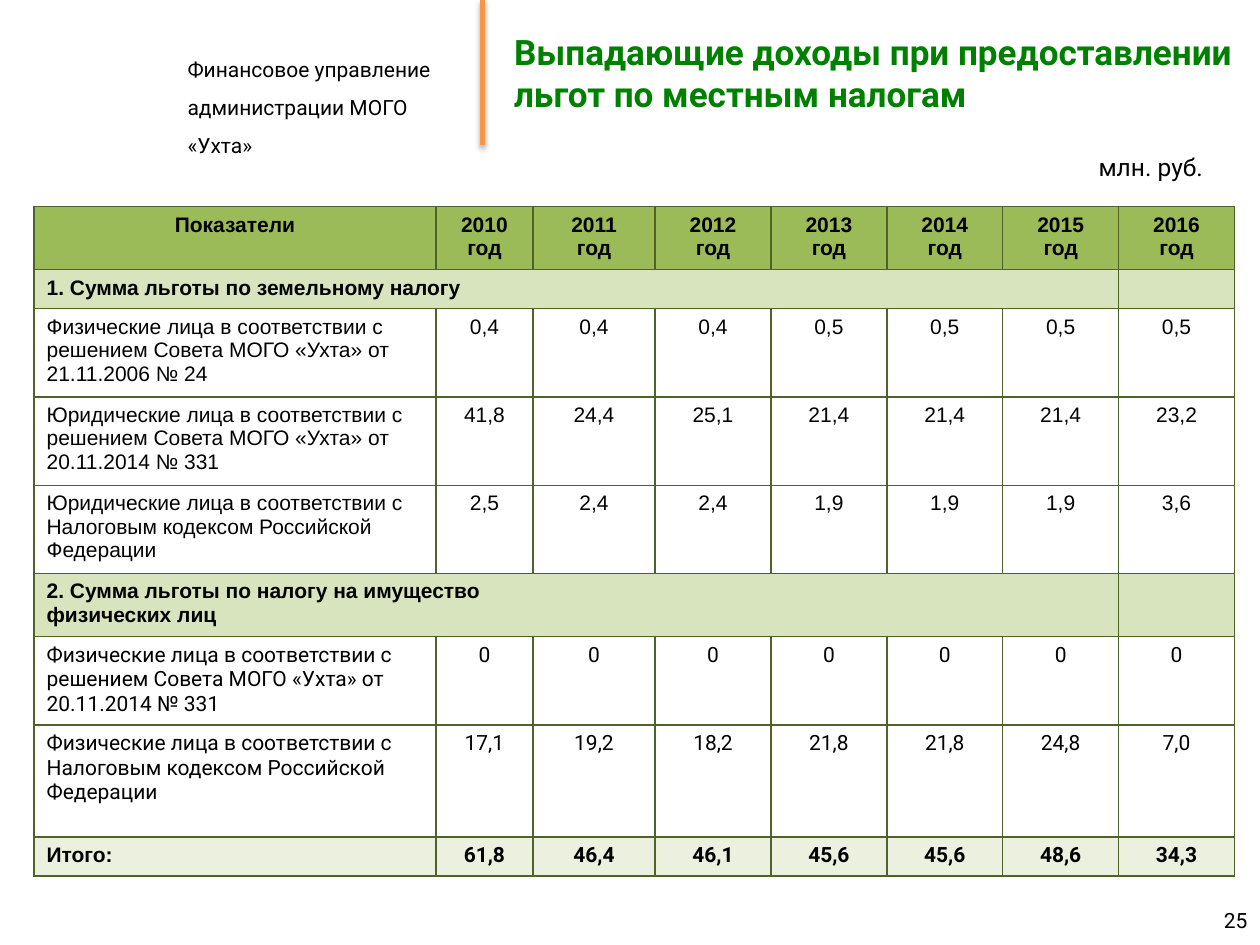
from dataclasses import dataclass

from lxml import etree
from pptx import Presentation
from pptx.dml.color import RGBColor
from pptx.enum.shapes import MSO_CONNECTOR
from pptx.enum.text import MSO_ANCHOR, MSO_AUTO_SIZE, PP_ALIGN
from pptx.oxml import parse_xml
from pptx.oxml.ns import nsdecls, qn
from pptx.util import Inches, Pt

LEFT, CENTER, RIGHT = PP_ALIGN.LEFT, PP_ALIGN.CENTER, PP_ALIGN.RIGHT
TOP, MIDDLE = MSO_ANCHOR.TOP, MSO_ANCHOR.MIDDLE
NO_AUTOFIT = MSO_AUTO_SIZE.NONE
STRAIGHT = MSO_CONNECTOR.STRAIGHT

BLACK, GREEN, ORANGE, BORDER = "000000", "008000", "F79646", "4F6228"
HEADER_FILL, SECTION_FILL, TOTAL_FILL = "9BBB59", "D7E4BD", "EBF1DE"


@dataclass
class Style:
    size: float = 12
    font: str = "Roboto"
    color: str = BLACK
    bold: bool = False
    align: PP_ALIGN = LEFT
    spacing: float = 1.0


@dataclass
class Row:
    height: float
    label: str
    values: str = ""
    fill: str = ""
    label_font: str = "Arial"
    value_font: str = "Arial"
    bold: bool = False


COLUMN_WIDTHS = [3.19, 0.77, 0.97] + [0.92] * 5
YEARS = ["2010 год"] + [f"{year}\nгод" for year in range(2011, 2017)]
COUNCIL = "лица в соответствии с решением Совета МОГО «Ухта» от"
TAX_CODE = "лица в соответствии с Налоговым кодексом Российской Федерации"
ROWS = [
    Row(0.31, "1. Сумма льготы по земельному налогу", fill=SECTION_FILL, bold=True),
    Row(0.66, f"Физические {COUNCIL} 21.11.2006 № 24", "0,4 0,4 0,4 0,5 0,5 0,5 0,5"),
    Row(0.66, f"Юридические {COUNCIL} 20.11.2014 № 331",
        "41,8 24,4 25,1 21,4 21,4 21,4 23,2"),
    Row(0.66, f"Юридические {TAX_CODE}", "2,5 2,4 2,4 1,9 1,9 1,9 3,6"),
    Row(0.48, "2. Сумма льготы по налогу на имущество\nфизических лиц",
        fill=SECTION_FILL, bold=True),
    Row(0.68, f"Физические {COUNCIL} 20.11.2014 № 331", "0 0 0 0 0 0 0",
        label_font="Roboto", value_font="Roboto"),
    Row(0.89, f"Физические {TAX_CODE}", "17,1 19,2 18,2 21,8 21,8 24,8 7,0",
        label_font="Roboto", value_font="Roboto"),
    Row(0.31, "Итого:", "61,8 46,4 46,1 45,6 45,6 48,6 34,3", TOTAL_FILL,
        value_font="Roboto", bold=True),
]


def rgb(color: str) -> RGBColor:
    return RGBColor.from_string(color)


def write(frame, text: str, style: Style) -> None:
    frame.text = text
    for para in frame.paragraphs:
        para.alignment = style.align
        para.line_spacing = style.spacing
        para.font.size = Pt(style.size)
        para.font.name = style.font
        para.font.bold = style.bold
        para.font.color.rgb = rgb(style.color)


def place(shape, left: float, top: float, width: float, height: float) -> None:
    shape.left, shape.top = Inches(left), Inches(top)
    shape.width, shape.height = Inches(width), Inches(height)


def add_text(page, left: float, top: float, width: float, height: float,
             text: str, style: Style, anchor: MSO_ANCHOR = TOP) -> None:
    box = page.shapes.add_textbox(Inches(left), Inches(top), Inches(width), Inches(height))
    box.text_frame.word_wrap = True
    box.text_frame.vertical_anchor = anchor
    write(box.text_frame, text, style)


def add_divider(page) -> None:
    line = page.shapes.add_connector(
        STRAIGHT, Inches(3.83), 0, Inches(3.83), Inches(1.15))
    line.line.color.rgb = rgb(ORANGE)
    line.line.width = Pt(3)
    # Soft shadow straight below the line
    line._element.spPr.append(parse_xml(
        f'<a:effectLst {nsdecls("a")}><a:outerShdw blurRad="{Pt(3.1)}" dist="{Pt(1.8)}" '
        f'dir="5400000" rotWithShape="0"><a:srgbClr val="{BLACK}">'
        '<a:alpha val="35000"/></a:srgbClr></a:outerShdw></a:effectLst>'))


def format_cell(cell, fill: str) -> None:
    # Borders must precede the fill
    properties = cell._tc.get_or_add_tcPr()
    for side in ("lnL", "lnR", "lnT", "lnB"):
        border = etree.SubElement(properties, qn(f"a:{side}"), w=str(Pt(1)))
        solid = etree.SubElement(border, qn("a:solidFill"))
        etree.SubElement(solid, qn("a:srgbClr"), val=BORDER)
    if fill:
        cell.fill.solid()
        cell.fill.fore_color.rgb = rgb(fill)
    else:
        cell.fill.background()


def fill_row(table, index: int, row: Row, texts: list[str], label_align: PP_ALIGN) -> None:
    table.rows[index].height = Inches(row.height)
    label_style = Style(font=row.label_font, bold=row.bold, align=label_align)
    value_style = Style(font=row.value_font, bold=row.bold, align=CENTER)
    for column in range(len(COLUMN_WIDTHS)):
        cell = table.cell(index, column)
        format_cell(cell, row.fill)
        if column == 0:
            write(cell.text_frame, row.label, label_style)
        else:
            write(cell.text_frame, texts[column - 1] if texts else "", value_style)
    if not texts:
        table.cell(index, 0).merge(table.cell(index, len(COLUMN_WIDTHS) - 2))


def add_benefits_table(page) -> None:
    header = Row(0.49, "Показатели", fill=HEADER_FILL, bold=True)
    height = header.height + sum(row.height for row in ROWS)
    table = page.shapes.add_table(
        len(ROWS) + 1, len(COLUMN_WIDTHS), Inches(0.27), Inches(1.64),
        Inches(sum(COLUMN_WIDTHS)), Inches(height)).table
    table.first_row = table.horz_banding = False
    for column, width in zip(table.columns, COLUMN_WIDTHS):
        column.width = Inches(width)
    fill_row(table, 0, header, YEARS, CENTER)
    for index, row in enumerate(ROWS, start=1):
        fill_row(table, index, row, row.values.split(), LEFT)


def main() -> None:
    deck = Presentation()
    deck.slide_width, deck.slide_height = Inches(10), Inches(7.5)
    page = deck.slides.add_slide(deck.slide_layouts[5])

    # Heading band
    add_text(page, 1.39, 0.3, 2.45, 0.66,
             "Финансовое управление\nадминистрации МОГО «Ухта»", Style(spacing=1.5))
    add_divider(page)
    title = page.shapes.title
    place(title, 3.98, 0, 6.02, 1.15)
    title.text_frame.auto_size = NO_AUTOFIT
    title.text_frame.vertical_anchor = MIDDLE
    write(title.text_frame, "Выпадающие доходы при предоставлении льгот по местным налогам",
          Style(size=20, color=GREEN, bold=True))

    # Page number, table and its unit
    add_text(page, 7.67, 7.1, 2.33, 0.4, "25", Style(align=RIGHT), MIDDLE)
    add_benefits_table(page)
    add_text(page, 8.62, 1.16, 1.18, 0.34, "млн. руб.", Style(size=14))

    deck.save("out.pptx")


if __name__ == "__main__":
    main()
